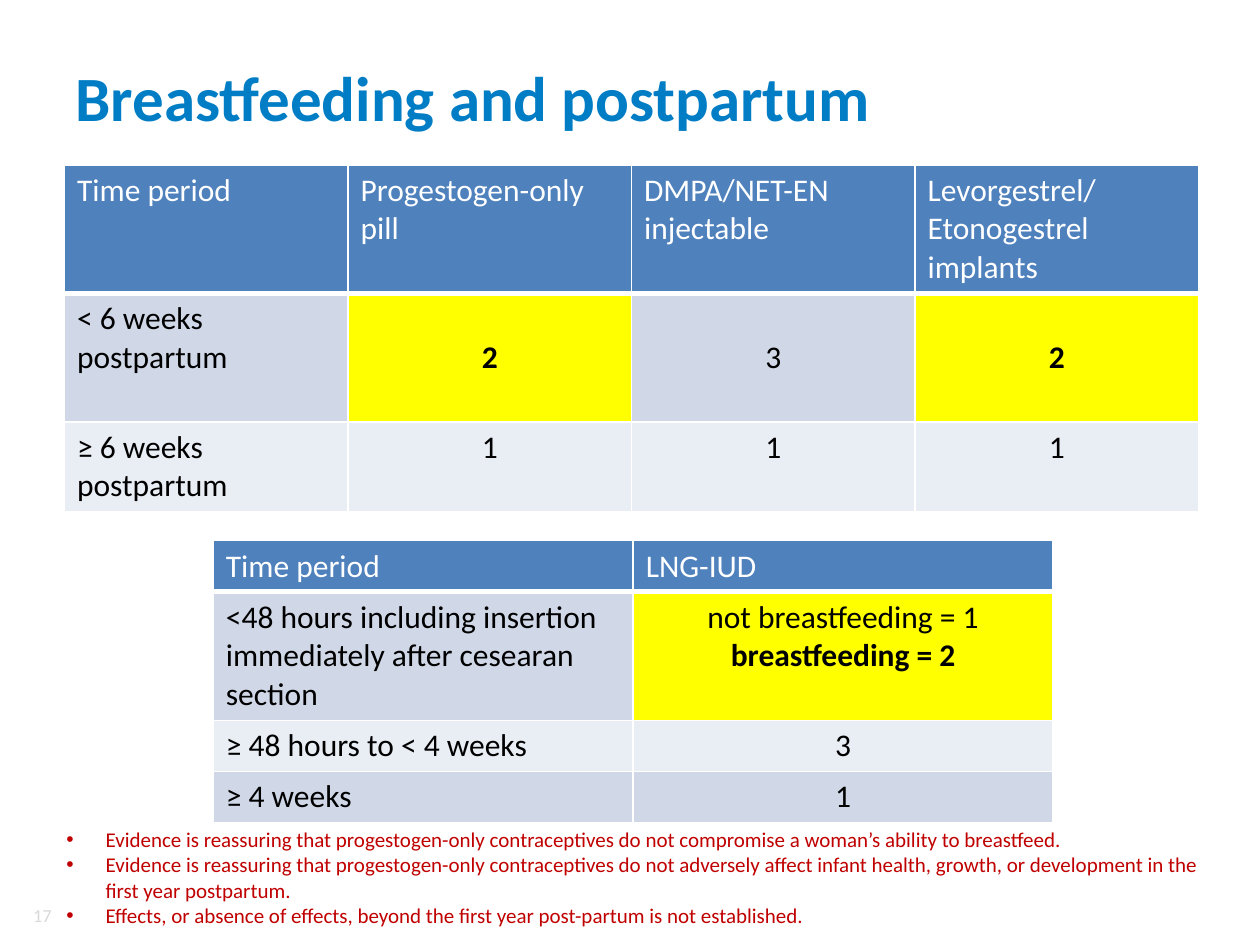
from lxml import etree
from pptx import Presentation
from pptx.dml.color import RGBColor
from pptx.enum import text
from pptx.oxml import ns
from pptx.util import Cm, Pt

COLORS = {
    "title": "007DC5", "header": "4F81BD", "band_dark": "D0D8E8",
    "band_light": "E9EDF4", "highlight": "FFFF00", "white": "FFFFFF",
    "black": "000000", "notes": "C00000", "number": "D9D9D9",
}
FONT = "Calibri"

METHODS = [
    ["Time period", "Progestogen-only pill", "DMPA/NET-EN injectable",
     "Levorgestrel/\nEtonogestrel implants"],
    ["< 6 weeks postpartum", "2", "3", "2"],
    ["≥ 6 weeks postpartum", "1", "1", "1"],
]
IUD = [
    ["Time period", "LNG-IUD"],
    ["<48 hours including insertion immediately after cesearan section",
     "not breastfeeding = 1\nbreastfeeding = 2"],
    ["≥ 48 hours to < 4 weeks", "3"],
    ["≥ 4 weeks", "1"],
]
NOTES = [
    "Evidence is reassuring that progestogen-only contraceptives do not "
    "compromise a woman’s ability to breastfeed.",
    "Evidence is reassuring that progestogen-only contraceptives do not "
    "adversely affect infant health, growth, or development in the first "
    "year postpartum.",
    "Effects, or absence of effects, beyond the first year post-partum is "
    "not established.",
]


def rgb(name):
    return RGBColor.from_string(COLORS[name])


def style(paragraph, size, color, bold=False):
    font = paragraph.font
    font.name, font.size, font.bold = FONT, Pt(size), bold
    font.color.rgb = rgb(color)


def add_title(slide, left, top, width, height):
    title = slide.shapes.title
    title.left, title.top = Cm(left), Cm(top)
    title.width, title.height = Cm(width), Cm(height)
    frame = title.text_frame
    frame.text = "Breastfeeding and postpartum"
    frame.vertical_anchor = text.MSO_ANCHOR.MIDDLE
    frame.paragraphs[0].alignment = text.PP_ALIGN.LEFT
    style(frame.paragraphs[0], 36, "title", bold=True)


def set_borders(cell, header):
    """White rules around a cell, heavier below the header."""
    properties = cell._tc.get_or_add_tcPr()
    for index, side in enumerate(("lnL", "lnR", "lnT", "lnB")):
        width = Pt(3) if header and side == "lnB" else Pt(1)
        line = etree.Element(ns.qn(f"a:{side}"), w=str(width))
        fill = etree.SubElement(line, ns.qn("a:solidFill"))
        etree.SubElement(fill, ns.qn("a:srgbClr"), val=COLORS["white"])
        properties.insert(index, line)


def format_cell(cell, content, row, column):
    """Style one cell; a category 2 rating is bold on a highlight."""
    header, rating = row == 0, row > 0 and column > 0
    cell.text = content
    highlighted = rating and content.endswith("2")
    band = "header" if header else "band_dark" if row % 2 else "band_light"
    cell.fill.solid()
    cell.fill.fore_color.rgb = rgb("highlight" if highlighted else band)
    set_borders(cell, header)
    for paragraph in cell.text_frame.paragraphs:
        bold = rating and paragraph.text.endswith("2")
        style(paragraph, 18, "white" if header else "black", bold)
        if rating:
            paragraph.alignment = text.PP_ALIGN.CENTER


def add_ratings_table(slide, data, left, top, width, heights):
    columns = len(data[0])
    table = slide.shapes.add_table(
        len(data), columns, Cm(left), Cm(top), Cm(width), Cm(sum(heights))
    ).table
    for column in table.columns:
        column.width = Cm(width / columns)
    for row, (contents, height) in enumerate(zip(data, heights)):
        table.rows[row].height = Cm(height)
        for column, content in enumerate(contents):
            format_cell(table.cell(row, column), content, row, column)
    return table


def add_notes(slide, left, top, width, height):
    frame = slide.shapes.add_textbox(
        Cm(left), Cm(top), Cm(width), Cm(height)).text_frame
    frame.word_wrap = True
    frame.text = "\n".join(NOTES)
    indent = Cm(0.79)
    for paragraph in frame.paragraphs:
        properties = paragraph._p.get_or_add_pPr()
        properties.set("marL", str(indent))
        properties.set("indent", str(-indent))
        etree.SubElement(properties, ns.qn("a:buFont"), typeface="Arial")
        etree.SubElement(properties, ns.qn("a:buChar"), char="•")
        style(paragraph, 12, "notes")


def add_slide_number(slide, left, top, width, height):
    frame = slide.shapes.add_textbox(
        Cm(left), Cm(top), Cm(width), Cm(height)).text_frame
    frame.word_wrap = True
    frame.vertical_anchor = text.MSO_ANCHOR.MIDDLE
    frame.text = "17"
    frame.paragraphs[0].alignment = text.PP_ALIGN.RIGHT
    style(frame.paragraphs[0], 10.5, "number")


def main():
    presentation = Presentation()
    presentation.slide_width, presentation.slide_height = Cm(25.4), Cm(19.05)
    title_only = presentation.slide_layouts[5]
    slide = presentation.slides.add_slide(title_only)

    add_slide_number(slide, 0.3, 18.14, 0.99, 0.61)
    add_title(slide, 1.27, 0.76, 22.86, 2.36)
    methods = add_ratings_table(
        slide, METHODS, 1.3, 3.33, 22.86, [2.59, 2.59, 1.81])
    for column in range(1, len(METHODS[0])):
        methods.cell(1, column).vertical_anchor = text.MSO_ANCHOR.MIDDLE
    add_ratings_table(
        slide, IUD, 4.3, 10.9, 16.93, [1.03, 2.59, 1.03, 1.03])
    add_notes(slide, 1.09, 16.54, 23.39, 2.31)
    presentation.save("out.pptx")


if __name__ == "__main__":
    main()
